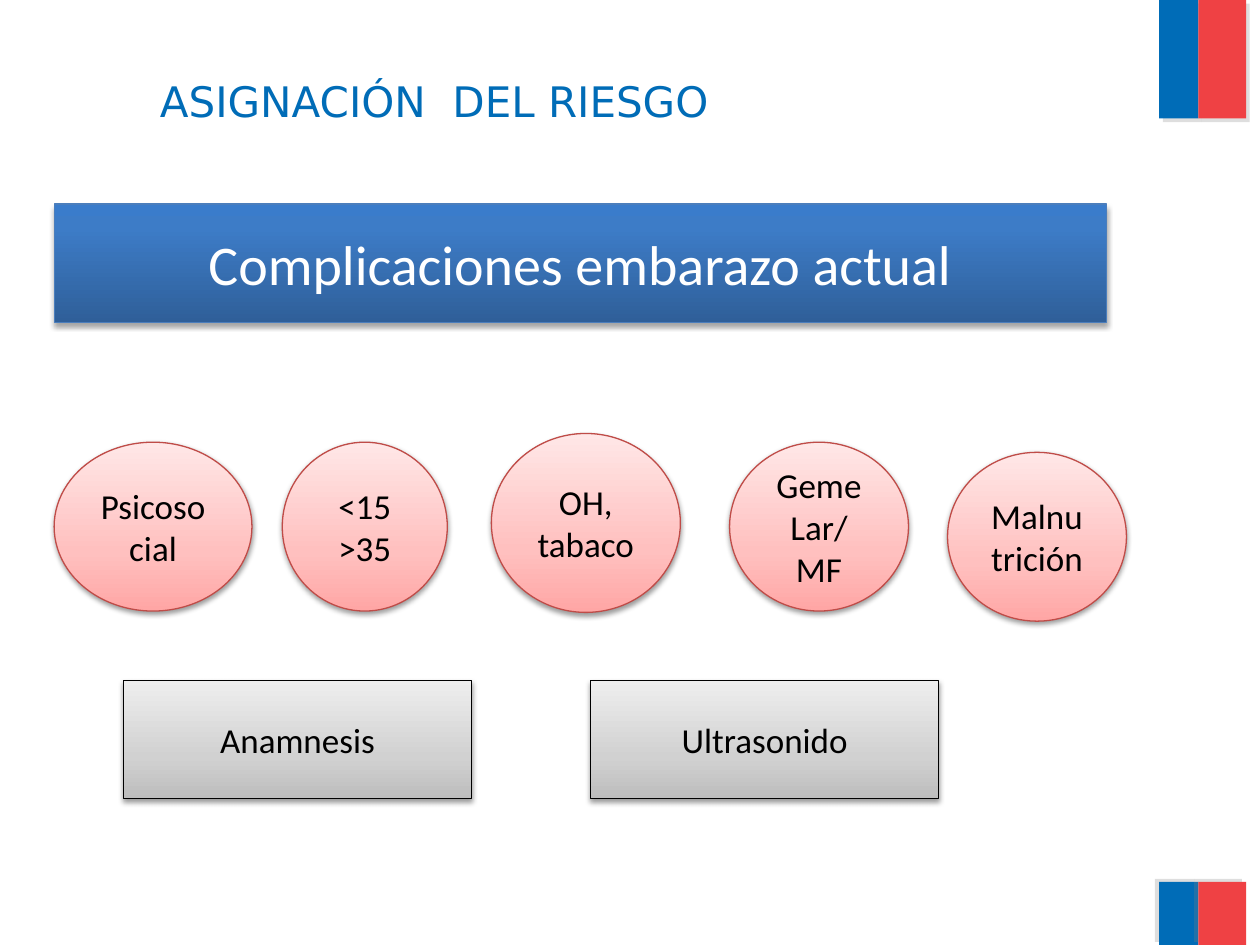
from lxml import etree
from pptx import Presentation
from pptx import util as u
from pptx.dml.color import RGBColor
from pptx.enum import shapes, text
from pptx.oxml.ns import qn

COLS, ROWS = 100, 75
CELL = u.Inches(0.1)
HUES = {
    "blue": "006CB7", "red": "EF4144", "gray": "808080",
    "black": "000000", "white": "FFFFFF",
    "edge": "4B7EBC", "rose": "BF4C48",
}
FADES = {
    "blue": [(0, "2F5F99"), (80, "3D7CC7"), (100, "3A7CCB")],
    "rose": [(0, "FFA6A5"), (35, "FFC0BF"), (100, "FFE7E7")],
    "gray": [(0, "BDBDBD"), (35, "D1D1D1"), (100, "EEEEEE")],
}
RECT = shapes.MSO_SHAPE.RECTANGLE
OVAL = shapes.MSO_SHAPE.OVAL


def rgb(name):
    return RGBColor.from_string(HUES[name])


def place(box):
    return [round(n * CELL) for n in box]


def sub(node, tag, **attrs):
    return etree.SubElement(node, qn(tag), {k: str(v) for k, v in attrs.items()})


def write(frame, words, size=20, font="Calibri", hue="black", align="CENTER"):
    frame.word_wrap = True
    frame.vertical_anchor = text.MSO_ANCHOR.MIDDLE
    frame.text = words
    for par in frame.paragraphs:
        par.alignment = getattr(text.PP_ALIGN, align)
        for run in par.runs:
            run.font.size = u.Pt(size)
            run.font.name = font
            run.font.color.rgb = rgb(hue)


def shade(shape, hue, alpha, blur, dist, angle):
    shape.shadow.inherit = False
    effect = shape._element.spPr.find(qn("a:effectLst"))
    outer = sub(effect, "a:outerShdw", blurRad=u.Pt(blur), dist=u.Pt(dist),
                dir=angle * 60000, algn="ctr", rotWithShape=0)
    color = sub(outer, "a:srgbClr", val=HUES[hue])
    sub(color, "a:alpha", val=alpha * 1000)


def fade(shape, name):
    shape.fill.gradient()
    shape.fill.gradient_angle = 90
    stops = shape._element.spPr.find(qn("a:gradFill")).find(qn("a:gsLst"))
    for old in list(stops):
        stops.remove(old)
    for spot, color in FADES[name]:
        sub(sub(stops, "a:gs", pos=spot * 1000), "a:srgbClr", val=color)


def panel(slide, box, words, kind=RECT, tone="gray", edge="black",
          alpha=38, dist=1.6, **style):
    shape = slide.shapes.add_shape(kind, *place(box))
    fade(shape, tone)
    shape.line.color.rgb = rgb(edge)
    shape.line.width = u.Pt(0.75)
    shade(shape, "black", alpha, 3.1, dist, 90)
    write(shape.text_frame, words, **style)


def flag(slide, box, angle):
    left, top, width, height = box
    split = width * 0.45
    for hue, x, w in (("blue", left, split), ("red", left + split, width - split)):
        band = slide.shapes.add_shape(RECT, *place((x, top, w, height)))
        band.fill.solid()
        band.fill.fore_color.rgb = rgb(hue)
        band.line.fill.background()
        shade(band, "gray", 25, 0, 3, angle)


def title(slide, box):
    label = slide.shapes.add_textbox(*place(box))
    label.text_frame.margin_left = 11 * CELL
    write(label.text_frame, "ASIGNACIÓN  DEL RIESGO", size=24,
          font="DejaVu Sans", hue="blue", align="LEFT")


def banner(slide, box):
    panel(slide, box, "Complicaciones embarazo actual", tone="blue",
          edge="edge", alpha=35, dist=1.8, size=32, hue="white")


def risks(slide, box):
    left, top, width, height = box
    items = [
        ("Psicosocial", 0, 0.7, 15.7, 13.4),
        ("<15\n>35", 18.1, 0.7, 13.1, 13.4),
        ("OH, tabaco", 34.7, 0, 15, 14.2),
        ("Geme\nLar/MF", 53.6, 0.7, 14.2, 13.4),
        ("Malnutrición", 70.9, 1.5, 14.2, 13.4),
    ]
    sx, sy = width / 85.1, height / 14.9
    for words, x, y, w, h in items:
        panel(slide, (left + x * sx, top + y * sy, w * sx, h * sy), words,
              kind=OVAL, tone="rose", edge="rose")


def tools(slide, box):
    left, top, width, height = box
    names = ["Anamnesis", "Ultrasonido"]
    wide = width * 0.427
    step = (width - wide) / (len(names) - 1)
    for i, name in enumerate(names):
        panel(slide, (left + i * step, top, wide, height), name)


def main():
    deck = Presentation()
    deck.slide_width, deck.slide_height = COLS * CELL, ROWS * CELL
    slide = deck.slides.add_slide(deck.slide_layouts[6])
    flag(slide, (92, 0, 6.9, 9.4), 45)
    flag(slide, (92, 70, 6.9, 5), 215)
    title(slide, (1.7, 1.7, 89.3, 12.5))
    banner(slide, (4.3, 16.2, 83.5, 9.4))
    risks(slide, (4.3, 34.4, 85.1, 14.9))
    tools(slide, (9.8, 54, 64.7, 9.4))
    deck.save("out.pptx")


if __name__ == "__main__":
    main()
